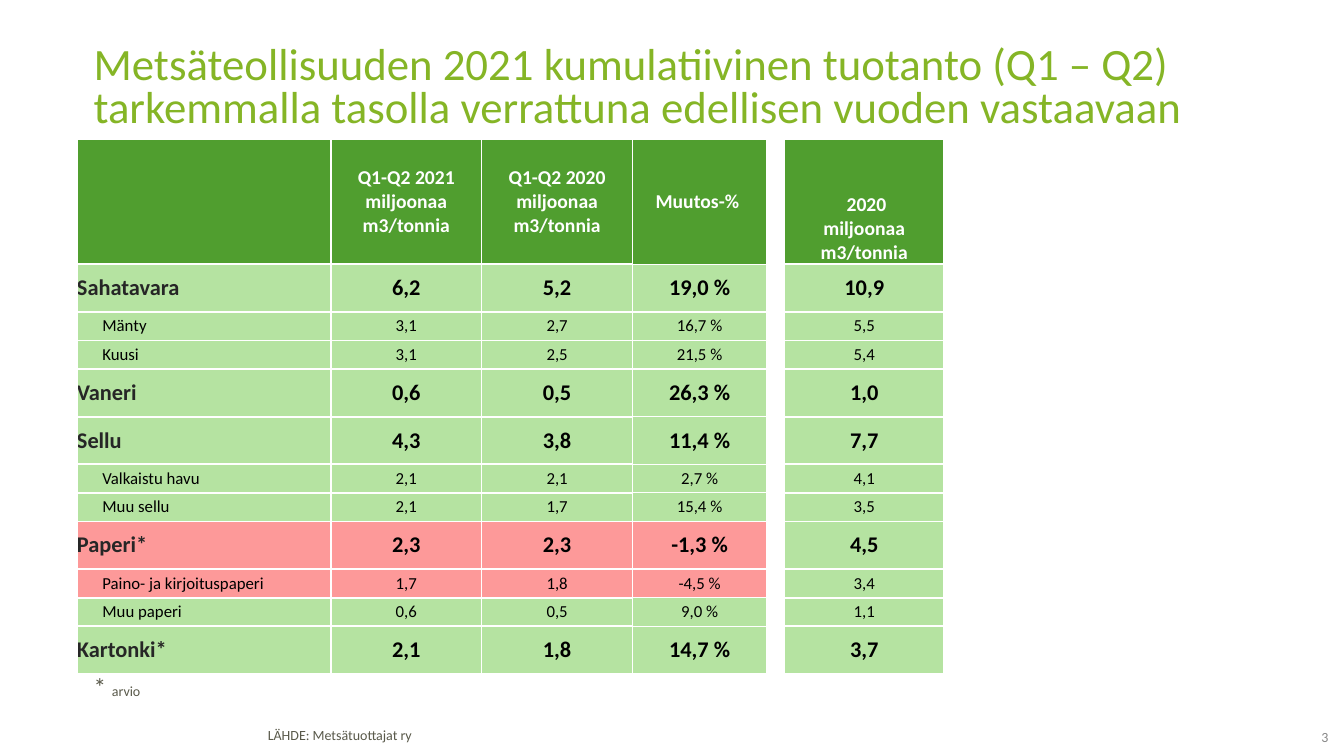
from lxml import etree
from pptx import Presentation
from pptx.dml.color import RGBColor
from pptx.enum.text import MSO_ANCHOR, PP_ALIGN
from pptx.oxml.ns import qn
from pptx.util import Cm, Pt

LEFT, CENTER, RIGHT = PP_ALIGN.LEFT, PP_ALIGN.CENTER, PP_ALIGN.RIGHT
TOP, MIDDLE, BOTTOM = MSO_ANCHOR.TOP, MSO_ANCHOR.MIDDLE, MSO_ANCHOR.BOTTOM

WHITE = RGBColor(0xFF, 0xFF, 0xFF)
BLACK = RGBColor(0x00, 0x00, 0x00)
CHARCOAL = RGBColor(0x26, 0x26, 0x26)
GRAY = RGBColor(0x87, 0x87, 0x87)
OLIVE = RGBColor(0x59, 0x59, 0x4A)
LIME = RGBColor(0x85, 0xB5, 0x26)
HEADER_GREEN = RGBColor(0x50, 0x9E, 0x2F)
GROWTH_GREEN = RGBColor(0xB5, 0xE3, 0xA1)
DECLINE_RED = RGBColor(0xFD, 0x99, 0x99)

COLUMN_WIDTHS = [6.4, 3.8, 3.8, 3.38, 0.46, 4.0]
HEADER_ROWS, HEADER_HEIGHT = 2, 1.37
GROUP_HEIGHT, DETAIL_HEIGHT = 1.2, 0.72
CHANGE_COLUMN, GAP_COLUMN, YEAR_COLUMN = 3, 4, 5

HEADERS = [
    "",
    "Q1-Q2 2021\nmiljoonaa\nm3/tonnia",
    "Q1-Q2 2020\nmiljoonaa\nm3/tonnia",
    "Muutos-% ",
    "",
    " 2020\nmiljoonaa\nm3/tonnia",
]
PRODUCTION = [
    (True, "Sahatavara", "6,2", "5,2", "19,0 %", "", "10,9"),
    (False, "Mänty", "3,1", "2,7", "16,7 %", "", "5,5"),
    (False, "Kuusi", "3,1", "2,5", "21,5 %", "", "5,4"),
    (True, "Vaneri", "0,6", "0,5", "26,3 %", "", "1,0"),
    (True, "Sellu", "4,3", "3,8", "11,4 %", "", "7,7"),
    (False, "Valkaistu havu", "2,1", "2,1", "2,7 %", "", "4,1"),
    (False, "Muu sellu", "2,1", "1,7", "15,4 %", "", "3,5"),
    (True, "Paperi*", "2,3", "2,3", "-1,3 %", "", "4,5"),
    (False, "Paino- ja kirjoituspaperi", "1,7", "1,8", "-4,5 %", "", "3,4"),
    (False, "Muu paperi", "0,6", "0,5", "9,0 %", "", "1,1"),
    (True, "Kartonki*", "2,1", "1,8", "14,7 %", "", "3,7"),
]


class ProductionPage:
    font_name = "Calibri"

    def __init__(self, deck):
        self.page = deck.slides.add_slide(deck.slide_layouts[6])

    def style(self, span, size, color, bold=False):
        span.font.name = self.font_name
        span.font.size = Pt(size)
        span.font.color.rgb = color
        span.font.bold = bold

    def text(self, place, spans, color, align=LEFT, anchor=TOP, spacing=1.0,
             margins=(0.25, 0.13, 0.25, 0.13)):
        box = self.page.shapes.add_textbox(*map(Cm, place))
        frame = box.text_frame
        frame.word_wrap = True
        frame.vertical_anchor = anchor
        (frame.margin_left, frame.margin_top,
         frame.margin_right, frame.margin_bottom) = map(Cm, margins)
        para = frame.paragraphs[0]
        para.alignment = align
        para.line_spacing = spacing
        for words, size in spans:
            span = para.add_run()
            span.text = words
            self.style(span, size, color)

    def borders(self, cell, horizontal):
        properties = cell._tc.get_or_add_tcPr()
        sides = [("a:lnL", 1), ("a:lnR", 1), ("a:lnT", horizontal), ("a:lnB", horizontal)]
        for position, (tag, width) in enumerate(sides):
            line = etree.Element(qn(tag), w=str(Pt(width)))
            fill = etree.SubElement(line, qn("a:solidFill"))
            etree.SubElement(fill, qn("a:srgbClr"), val=str(WHITE))
            properties.insert(position, line)

    def cell(self, cell, words, fill, size, color, bold, align=CENTER,
             anchor=MIDDLE, indent=0, horizontal=1.5):
        cell.fill.solid()
        cell.fill.fore_color.rgb = fill
        self.borders(cell, horizontal)
        cell.vertical_anchor = anchor
        cell.margin_left = Cm(indent)
        cell.margin_top = cell.margin_right = cell.margin_bottom = 0
        cell.text_frame.text = words
        for para in cell.text_frame.paragraphs:
            para.alignment = align
            for span in para.runs:
                self.style(span, size, color, bold)
            if not para.runs:
                etree.SubElement(para._p, qn("a:endParaRPr"), sz=str(size * 100))

    def table(self, left, top):
        heights = [HEADER_HEIGHT] * HEADER_ROWS
        heights += [GROUP_HEIGHT if row[0] else DETAIL_HEIGHT for row in PRODUCTION]
        frame = self.page.shapes.add_table(
            len(heights), len(COLUMN_WIDTHS), Cm(left), Cm(top),
            Cm(sum(COLUMN_WIDTHS)), Cm(sum(heights)))
        table = frame.table
        table.first_row = table.horz_banding = False
        for column, width in zip(table.columns, COLUMN_WIDTHS):
            column.width = Cm(width)
        for row, height in zip(table.rows, heights):
            row.height = Cm(height)
        self.header(table)
        for index, row in enumerate(PRODUCTION, HEADER_ROWS):
            self.production_row(table, index, *row)

    def header(self, table):
        for column, words in enumerate(HEADERS):
            gap = column == GAP_COLUMN
            for row in range(HEADER_ROWS):
                self.cell(table.cell(row, column), "" if row else words,
                          WHITE if gap else HEADER_GREEN, 14, WHITE, True,
                          anchor=BOTTOM if column == YEAR_COLUMN else MIDDLE,
                          horizontal=1 if column == CHANGE_COLUMN else 1.5)
            if not gap:
                table.cell(0, column).merge(table.cell(HEADER_ROWS - 1, column))

    def production_row(self, table, index, group, *values):
        declining = values[CHANGE_COLUMN].startswith("-")
        for column, words in enumerate(values):
            label = column == 0
            fill = GROWTH_GREEN
            if column == GAP_COLUMN:
                fill = WHITE
            elif declining and column < GAP_COLUMN:
                fill = DECLINE_RED
            self.cell(table.cell(index, column), words, fill,
                      16 if group else 12,
                      CHARCOAL if label and group else BLACK, group,
                      align=LEFT if label else CENTER,
                      indent=0.64 if label and not group else 0,
                      horizontal=1 if column == CHANGE_COLUMN else 1.5)


def main():
    deck = Presentation()
    deck.slide_width, deck.slide_height = Cm(33.87), Cm(19.05)
    page = ProductionPage(deck)
    page.text((6.5, 18.24, 18.24, 0.69), [("LÄHDE: Metsätuottajat ry", 10)], OLIVE, spacing=0.85)
    page.text((32.13, 18.39, 1.35, 0.48), [("3", 10)], GRAY, align=RIGHT,
              anchor=MIDDLE, margins=(0, 0, 0, 0.1))
    page.text((2.11, 0.99, 29.69, 2.49),
              [("Metsäteollisuuden 2021 kumulatiivinen tuotanto (Q1 – Q2) "
                "tarkemmalla tasolla verrattuna edellisen vuoden vastaavaan", 32)],
              LIME, anchor=MIDDLE, spacing=0.8)
    page.table(1.94, 3.51)
    page.text((2.11, 16.79, 2.62, 1.02), [("* ", 18), ("arvio", 10)], OLIVE)
    deck.save("out.pptx")


if __name__ == "__main__":
    main()
